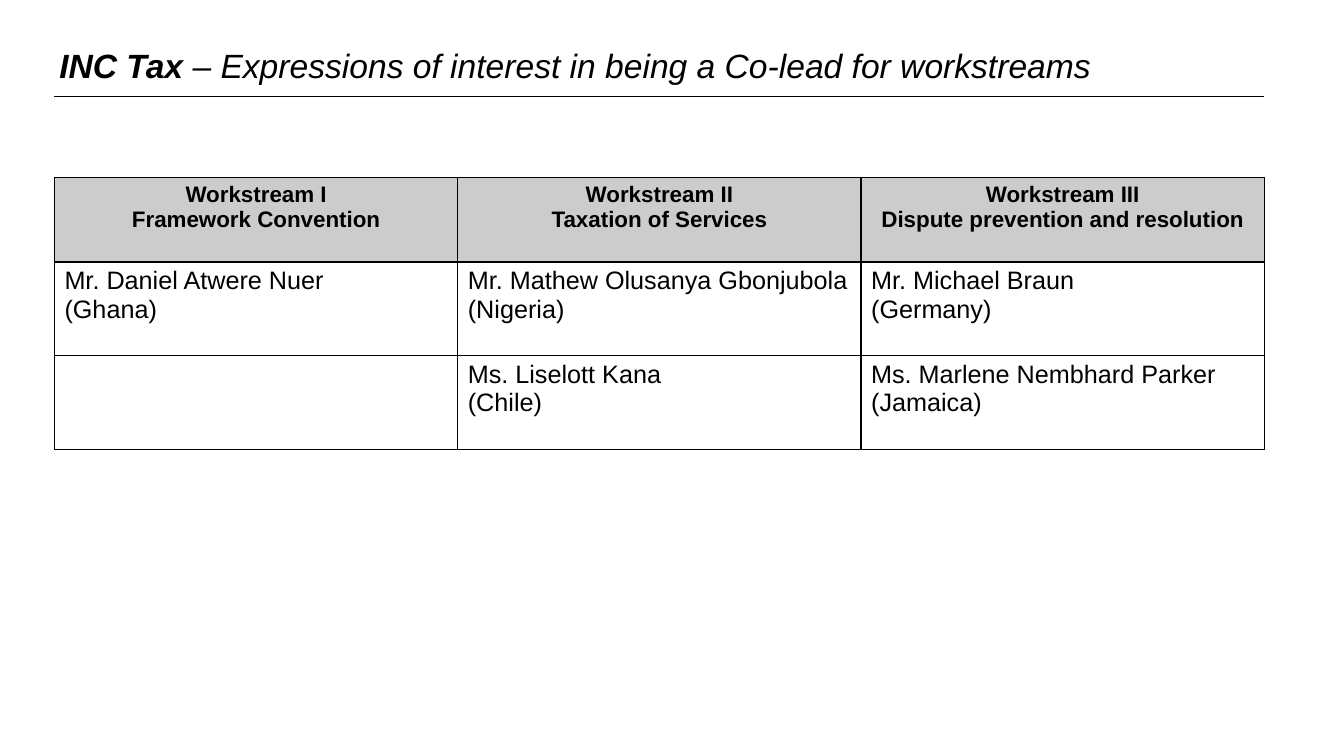
from dataclasses import dataclass

from lxml import etree
from pptx import Presentation
from pptx.dml.color import RGBColor
from pptx.enum.shapes import MSO_CONNECTOR
from pptx.enum.text import MSO_ANCHOR, PP_ALIGN
from pptx.oxml.ns import qn
from pptx.util import Inches, Pt

STRAIGHT = MSO_CONNECTOR.STRAIGHT
MIDDLE = MSO_ANCHOR.MIDDLE
LEFT, CENTER = PP_ALIGN.LEFT, PP_ALIGN.CENTER


@dataclass(frozen=True)
class Theme:
    font: str = "Arial"
    ink: str = "000000"
    header_fill: str = "CCCCCC"
    title_size: float = 24
    header_size: float = 16
    body_size: float = 18
    rule_width: float = 0.75
    border_width: float = 1


THEME = Theme()
MARGIN, CONTENT_WIDTH = 0.54, 12
TABLE_TOP = 1.76
ROW_HEIGHTS = [0.84, 0.93, 0.93]

TITLE = [("INC Tax ", True),
         ("– Expressions of interest in being a Co-lead for workstreams", False)]

# Each cell is a list of paragraphs.
WORKSTREAMS = [
    [["Workstream I", "Framework Convention"],
     ["Workstream II", "Taxation of Services"],
     ["Workstream III", "Dispute prevention and resolution"]],
    [["Mr. Daniel Atwere Nuer", "(Ghana)"],
     ["Mr. Mathew Olusanya Gbonjubola (Nigeria)"],
     ["Mr. Michael Braun", "(Germany)"]],
    [[],
     ["Ms. Liselott Kana", "(Chile)"],
     ["Ms. Marlene Nembhard Parker (Jamaica)"]],
]


def add_run(paragraph, text, size, bold=False, italic=False):
    run = paragraph.add_run()
    run.text = text
    run.font.name = THEME.font
    run.font.size = Pt(size)
    run.font.bold = bold
    run.font.italic = italic
    run.font.color.rgb = RGBColor.from_string(THEME.ink)


def add_title(slide):
    title = slide.shapes.add_textbox(Inches(0.49), Inches(0.35),
                                     Inches(CONTENT_WIDTH), Inches(0.6))
    frame = title.text_frame
    frame.word_wrap = True
    frame.vertical_anchor = MIDDLE
    for text, bold in TITLE:
        add_run(frame.paragraphs[0], text, THEME.title_size, bold, italic=True)


def add_title_rule(slide):
    y = Inches(0.96)
    rule = slide.shapes.add_connector(STRAIGHT, Inches(MARGIN), y,
                                      Inches(MARGIN + CONTENT_WIDTH), y)
    rule.line.color.rgb = RGBColor.from_string(THEME.ink)
    rule.line.width = Pt(THEME.rule_width)
    etree.SubElement(rule._element.spPr, qn("a:effectLst"))


def set_borders(cell):
    """Draw all four edges; they must come before the fill in the cell's XML."""
    properties = cell._tc.get_or_add_tcPr()
    for position, edge in enumerate(("lnL", "lnR", "lnT", "lnB")):
        line = etree.Element(qn(f"a:{edge}"), w=str(Pt(THEME.border_width)))
        fill = etree.SubElement(line, qn("a:solidFill"))
        etree.SubElement(fill, qn("a:srgbClr"), val=THEME.ink)
        properties.insert(position, line)


def fill_cell(cell, lines, is_header):
    if is_header:
        cell.fill.solid()
        cell.fill.fore_color.rgb = RGBColor.from_string(THEME.header_fill)
    else:
        cell.fill.background()
    set_borders(cell)
    frame = cell.text_frame
    size = THEME.header_size if is_header else THEME.body_size
    for index, text in enumerate(lines):
        paragraph = frame.add_paragraph() if index else frame.paragraphs[0]
        paragraph.alignment = CENTER if is_header else LEFT
        add_run(paragraph, text, size, bold=is_header)


def add_workstream_table(slide):
    column_count = len(WORKSTREAMS[0])
    table = slide.shapes.add_table(
        len(WORKSTREAMS), column_count, Inches(MARGIN), Inches(TABLE_TOP),
        Inches(CONTENT_WIDTH), Inches(sum(ROW_HEIGHTS))).table
    table.horz_banding = False
    for column in table.columns:
        column.width = Inches(CONTENT_WIDTH / column_count)
    for row_index, (height, cells) in enumerate(zip(ROW_HEIGHTS, WORKSTREAMS)):
        table.rows[row_index].height = Inches(height)
        for column_index, lines in enumerate(cells):
            fill_cell(table.cell(row_index, column_index), lines,
                      is_header=row_index == 0)


def main():
    presentation = Presentation()
    presentation.slide_width = Inches(13.33)
    presentation.slide_height = Inches(7.5)
    slide = presentation.slides.add_slide(presentation.slide_layouts[6])
    add_title(slide)
    add_title_rule(slide)
    add_workstream_table(slide)
    presentation.save("out.pptx")


if __name__ == "__main__":
    main()
